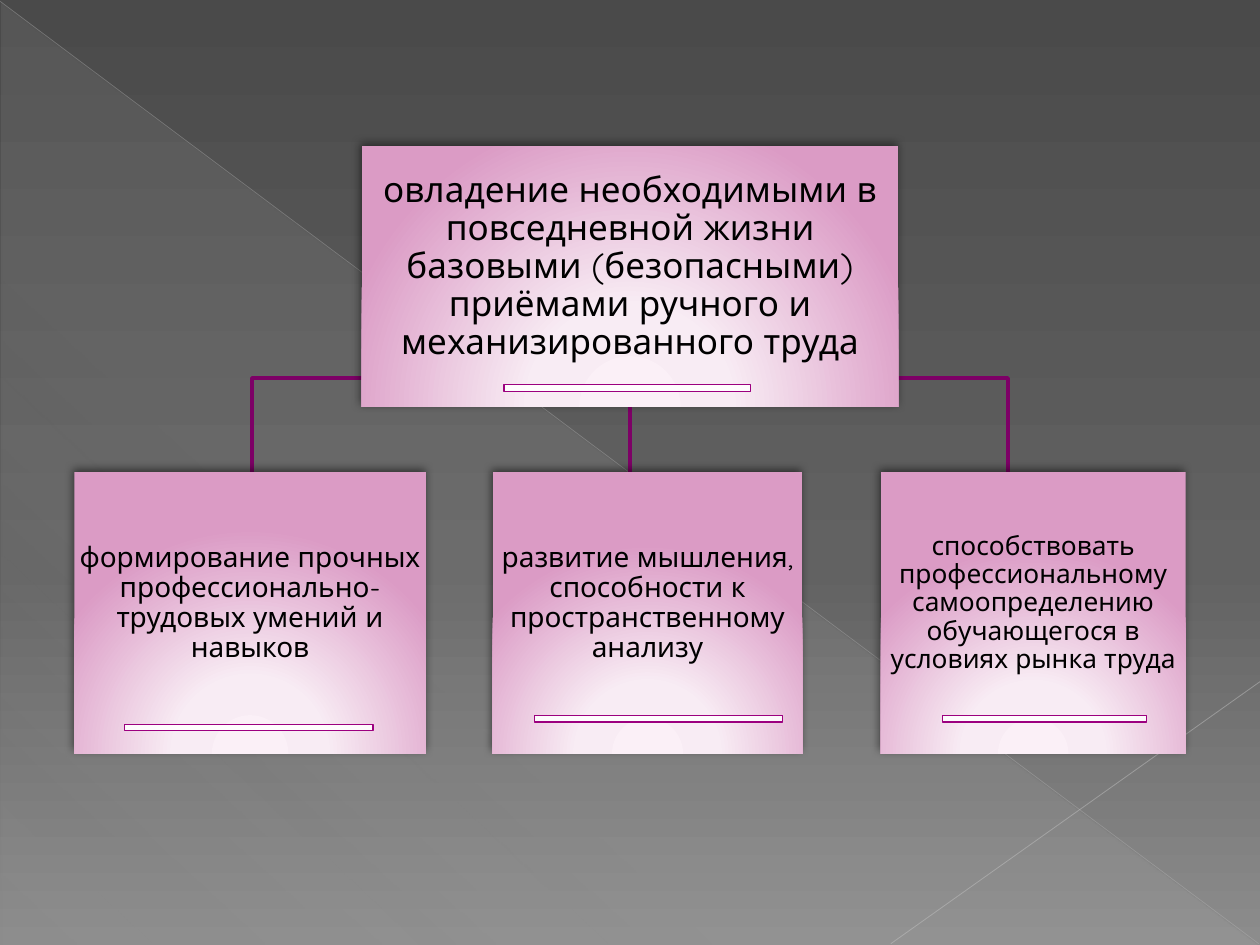
"""Build a slide with a tree of labour training goals: one main box and three below it."""
from lxml.etree import SubElement
from pptx import Presentation
from pptx.dml.color import RGBColor
from pptx.enum.shapes import MSO_CONNECTOR, MSO_SHAPE
from pptx.enum.text import MSO_ANCHOR, PP_ALIGN
from pptx.oxml.ns import qn
from pptx.util import Inches, Pt

BLACK = RGBColor(0x00, 0x00, 0x00)
WHITE = RGBColor(0xFF, 0xFF, 0xFF)
PURPLE = RGBColor(0x7D, 0x00, 0x66)
MAGENTA = RGBColor(0x9C, 0x00, 0x7F)
SILVER = RGBColor(0xBF, 0xBF, 0xBF)
PALE = RGBColor(0xC6, 0xC6, 0xC6)
MIST = RGBColor(0xD2, 0xD2, 0xD2)
BACKDROP = [(0, RGBColor(0x4A, 0x4A, 0x4A), 100), (60, RGBColor(0x62, 0x62, 0x62), 100),
            (100, RGBColor(0x8C, 0x8C, 0x8C), 100)]
VEIL = [(0, MIST, 10), (70, MIST, 8), (100, MIST, 1)]
PINK = [(0, RGBColor(0xFB, 0xF0, 0xF7), 100), (34, RGBColor(0xF8, 0xEC, 0xF4), 100),
        (100, RGBColor(0xDB, 0x9B, 0xC5), 100)]
GLOW = {"l": 50, "t": 155, "r": 50, "b": -55}
FONT = "Quicksand"

RAYS = [((0, 0.01), (9.99, 7.49), SILVER, 0.39, 35),
        ((10, 5.41), (7.07, 7.49), PALE, 0.47, 45)]
GOAL = ("овладение необходимыми в повседневной жизни базовыми (безопасными) "
        "приёмами ручного и механизированного труда", 20,
        (2.87, 1.16, 4.26, 2.07), (4, 3.05, 1.96, 0.06))
TASKS = [
    ("формирование прочных профессионально-трудовых умений и навыков", 16,
     (0.59, 3.75, 2.79, 2.23), (0.99, 5.75, 1.97, 0.05)),
    ("развитие мышления, способности к пространственному анализу", 16,
     (3.91, 3.75, 2.46, 2.23), (4.24, 5.68, 1.97, 0.05)),
    ("способствовать профессиональному самоопределению обучающегося "
     "в условиях рынка труда", 15,
     (6.99, 3.75, 2.42, 2.23), (7.48, 5.68, 1.62, 0.05)),
]


def add_color(parent, color, alpha):
    clr = SubElement(parent, qn("a:srgbClr"), val=str(color))
    SubElement(clr, qn("a:alpha"), val=str(alpha * 1000))


def set_gradient(fill, element, stops, angle=None):
    fill.gradient()
    grad = next(element.iter(qn("a:gradFill")))
    grad.clear()
    stop_list = SubElement(grad, qn("a:gsLst"))
    for pos, color, alpha in stops:
        add_color(SubElement(stop_list, qn("a:gs"), pos=str(pos * 1000)), color, alpha)
    if angle is None:
        center = SubElement(grad, qn("a:path"), path="circle")
        SubElement(center, qn("a:fillToRect"),
                   {side: str(pct * 1000) for side, pct in GLOW.items()})
    else:
        SubElement(grad, qn("a:lin"), ang=str(angle * 60000), scaled="0")


def set_alpha(element, alpha):
    clr = next(element.iter(qn("a:srgbClr")))
    SubElement(clr, qn("a:alpha"), val=str(alpha * 1000))


def add_shape(slide, kind, box):
    sp = slide.shapes.add_shape(kind, *map(Inches, box))
    sp.shadow.inherit = False
    sp.line.fill.background()
    return sp


def add_ray(slide, start, end, color, width, alpha):
    ray = slide.shapes.add_connector(MSO_CONNECTOR.STRAIGHT, *map(Inches, start + end))
    ray.line.color.rgb = color
    ray.line.width = Pt(width)
    set_alpha(ray._element, alpha)
    SubElement(ray._element.spPr, qn("a:effectLst"))


def add_branch(slide, parent, child):
    x1, y1 = parent[0] + parent[2] / 2, parent[1] + parent[3]
    x2, y2 = child[0] + child[2] / 2, child[1]
    mid = (y1 + y2) / 2
    builder = slide.shapes.build_freeform(x1, y1, scale=Inches(1))
    builder.add_line_segments([(x1, mid), (x2, mid), (x2, y2)], close=False)
    sp = builder.convert_to_shape()
    sp.shadow.inherit = False
    sp.fill.background()
    sp.line.color.rgb = PURPLE
    sp.line.width = Pt(2)


def add_card(slide, text, size, box, bar):
    sp = add_shape(slide, MSO_SHAPE.RECTANGLE, box)
    set_gradient(sp.fill, sp._element, PINK)
    effects = next(sp._element.iter(qn("a:effectLst")))
    shadow = SubElement(effects, qn("a:outerShdw"), blurRad=str(Pt(5)), dist=str(Pt(2)),
                        dir=str(245 * 60000), rotWithShape="0")
    add_color(shadow, BLACK, 50)
    tf = sp.text_frame
    tf.word_wrap = True
    tf.vertical_anchor = MSO_ANCHOR.MIDDLE
    tf.margin_left = tf.margin_right = tf.margin_top = Inches(0.01)
    tf.margin_bottom = Inches(0.16)
    p = tf.paragraphs[0]
    p.alignment = PP_ALIGN.CENTER
    p.line_spacing = 0.9
    r = p.add_run()
    r.text = text
    r.font.name = FONT
    r.font.size = Pt(size)
    r.font.color.rgb = BLACK

    rule = add_shape(slide, MSO_SHAPE.RECTANGLE, bar)
    rule.fill.solid()
    rule.fill.fore_color.rgb = WHITE
    set_alpha(rule._element, 90)
    rule.line.color.rgb = MAGENTA
    rule.line.width = Pt(0.75)


def main():
    prs = Presentation()
    prs.slide_width, prs.slide_height = Inches(10), Inches(7.5)
    slide = prs.slides.add_slide(prs.slide_layouts[6])
    set_gradient(slide.background.fill, slide._element, BACKDROP, 90)
    veil = add_shape(slide, MSO_SHAPE.RIGHT_TRIANGLE, (0.01, 0.02, 9.98, 7.48))
    set_gradient(veil.fill, veil._element, VEIL, 133)
    for ray in RAYS:
        add_ray(slide, *ray)
    for task in reversed(TASKS):
        add_branch(slide, GOAL[2], task[2])
    for card in [GOAL, *TASKS]:
        add_card(slide, *card)
    prs.save("out.pptx")


if __name__ == "__main__":
    main()
